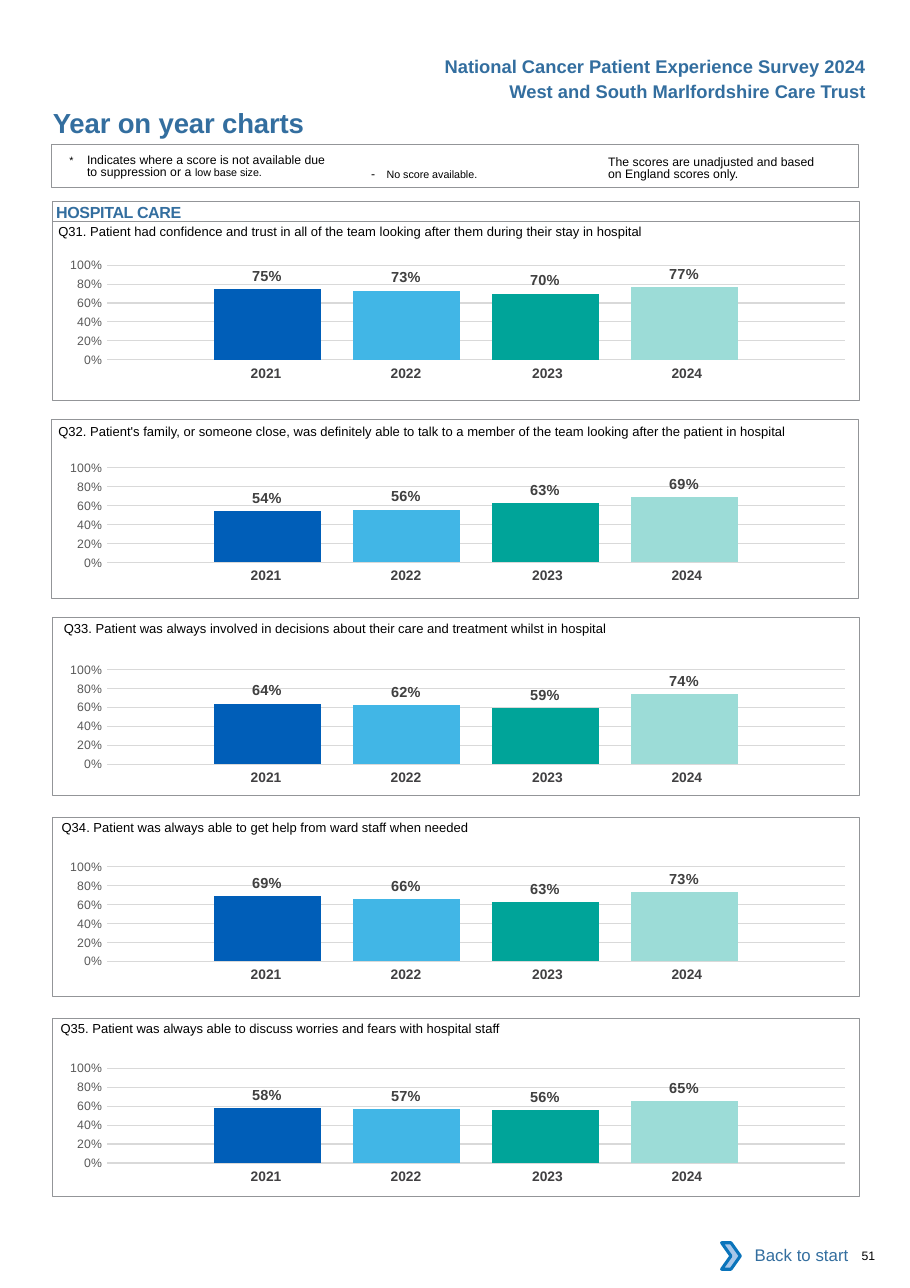
"""Build the year on year charts page for the hospital care questions."""
from lxml import etree
from pptx import Presentation
from pptx import util as u
from pptx.chart import data as chart_data
from pptx.dml import color as dml
from pptx.enum import chart as charts, shapes, text
from pptx.oxml import ns

colour = dml.RGBColor.from_string
BLUE, BLACK, FRAME = "336E9F", "000000", "939598"
YEARS = {"2021": "005EB8", "2022": "41B6E6", "2023": "00A499", "2024": "9CDCD7"}
RIGHT = text.PP_ALIGN.RIGHT


def set_format(target, **values):
    for name, value in values.items():
        if name == "color":
            target.color.rgb = colour(value)
        else:
            setattr(target, name, value)


def add_text(bounds, wording, size, color=BLACK, bold=False, inset=(0, 0, 0, 0),
             align=None, line=None, hanging=0, spacing=0):
    shape = slide.shapes.add_textbox(*map(u.Inches, bounds))
    left, top, right, bottom = map(u.Inches, inset)
    set_format(shape.text_frame, word_wrap=True, margin_left=left, margin_top=top,
               margin_right=right, margin_bottom=bottom)
    paragraph = shape.text_frame.paragraphs[0]
    set_format(paragraph, alignment=align, line_spacing=line)
    if hanging:
        properties = paragraph._p.get_or_add_pPr()
        properties.set("marL", str(u.Inches(hanging)))
        properties.set("indent", str(-u.Inches(hanging)))
    pieces = wording if isinstance(wording, list) else [(wording, size)]
    for words, points in pieces:
        run = paragraph.add_run()
        run.text = words
        set_format(run.font, name="Arial", size=u.Pt(points), bold=bold, color=color)
        if spacing:
            run._r.get_or_add_rPr().set("spc", str(spacing))


presentation = Presentation()
set_format(presentation, slide_width=u.Inches(8.26), slide_height=u.Inches(11.69))
slide = presentation.slides.add_slide(presentation.slide_layouts[6])

for top, heading in ((0.45, "National Cancer Patient Experience Survey 2024"),
                     (0.68, "West and South Marlfordshire Care Trust")):
    add_text((3.76, top, 4.2, 0.3), heading, 12, BLUE, True, (0.1, 0.05, 0.1, 0.05), RIGHT)
add_text((0.48, 0.96, 4.5, 0.3), "Year on year charts", 18, BLUE, True, spacing=-10)

add_text((0.63, 1.37, 2.38, 0.27),
         [("*\t", 7), ("Indicates where a score is not available due to suppression or a ", 8),
          ("low base size.", 7)],
         8, inset=(0, 0.03, 0, 0), line=u.Pt(8.1), hanging=0.16)
add_text((3.37, 1.51, 1.6, 0.17), [("-\t", 8), ("No score available.", 7)], 8, hanging=0.14)
add_text((5.52, 1.39, 1.95, 0.27), "The scores are unadjusted and based on England scores only.",
         8, inset=(0, 0.03, 0, 0), line=u.Pt(8.1))
add_text((0.51, 1.84, 7.2, 0.17), "HOSPITAL CARE", 10.5, BLUE, True, spacing=-20)

questions = [
    ("Q31. Patient had confidence and trust in all of the team looking after them during their "
     "stay in hospital", (0.53, 1.94), (0.48, 2.01), 2.22, (0.75, 0.73, 0.7, 0.77)),
    ("Q32. Patient's family, or someone close, was definitely able to talk to a member of the "
     "team looking after the patient in hospital", (0.53, 3.75), (0.47, 3.81), 4.06,
     (0.54, 0.56, 0.63, 0.69)),
    ("Q33. Patient was always involved in decisions about their care and treatment whilst in "
     "hospital", (0.58, 5.54), (0.48, 5.6), 5.89, (0.64, 0.62, 0.59, 0.74)),
    ("Q34. Patient was always able to get help from ward staff when needed",
     (0.56, 7.35), (0.48, 7.42), 7.68, (0.69, 0.66, 0.63, 0.73)),
    ("Q35. Patient was always able to discuss worries and fears with hospital staff",
     (0.55, 9.17), (0.48, 9.24), 9.51, (0.58, 0.57, 0.56, 0.65)),
]
frames = [(0.47, 1.31, 7.32, 0.39, 0.75), (0.48, 1.83, 7.32, 0.18, 0.5)]

for question, question_corner, frame_corner, chart_top, scores in questions:
    add_text((*question_corner, 7.2, 0.24), question, 8.5, inset=(0, 0.09, 0, 0))
    frames.append((*frame_corner, 7.32, 1.62, 0.5))

    values = chart_data.CategoryChartData(number_format="0%")
    values.categories = ["1"]
    for year, score in zip(YEARS, scores):
        values.add_series(year, [score])
    chart = slide.shapes.add_chart(
        charts.XL_CHART_TYPE.COLUMN_CLUSTERED,
        *map(u.Inches, (0.39, chart_top, 7.32, 1.29)), values).chart
    set_format(chart, has_legend=False, has_title=False)
    set_format(chart.font, name="Calibri", size=u.Pt(10), color=BLACK)
    chart.category_axis.visible = False
    axis = chart.value_axis
    set_format(axis, minimum_scale=0, maximum_scale=1, major_unit=0.2,
               major_tick_mark=charts.XL_TICK_MARK.NONE)
    set_format(axis.tick_labels, number_format="0%", number_format_is_linked=False)
    set_format(axis.tick_labels.font, name="Arial", size=u.Pt(8), color="595959")
    axis.format.line.fill.background()
    set_format(axis.major_gridlines.format.line, color="D9D9D9", width=u.Pt(0.75))

    plot = chart.plots[0]
    set_format(plot, gap_width=200, overlap=-30, vary_by_categories=False)
    for series, fill in zip(plot.series, YEARS.values()):
        series.format.fill.solid()
        series.format.fill.fore_color.rgb = colour(fill)
        labels = series.data_labels
        set_format(labels, show_value=True, number_format="0%", number_format_is_linked=False,
                   position=charts.XL_LABEL_POSITION.OUTSIDE_END)
        set_format(labels.font, name="Arial", size=u.Pt(9.5), bold=True, color="404040")

    plot_area = chart._chartSpace.chart.plotArea
    for old_layout in plot_area.findall(ns.qn("c:layout")):
        plot_area.remove(old_layout)
    layout = etree.Element(ns.qn("c:layout"))
    plot_area.insert(0, layout)
    manual = etree.SubElement(layout, ns.qn("c:manualLayout"))
    for tag, value in (("layoutTarget", "inner"), ("xMode", "edge"), ("yMode", "edge"),
                       ("x", "0.079"), ("y", "0.145"), ("w", "0.915"), ("h", "0.666")):
        etree.SubElement(manual, ns.qn(f"c:{tag}")).set("val", value)

    table = slide.shapes.add_table(
        1, 4, *map(u.Inches, (1.73, chart_top + 1.05, 5.15, 0.27))).table
    set_format(table, first_row=False, horz_banding=False)
    table._tbl.tblPr.find(ns.qn("a:tableStyleId")).text = "{2D5ABB26-0587-4C30-8999-92F81FD0307C}"
    for index, (year, width, margin) in enumerate(
            zip(YEARS, (1.27, 1.27, 1.34, 1.27), (0, 0, 0.04, 0.12))):
        table.columns[index].width = u.Inches(width)
        cell = table.cell(0, index)
        cell.fill.background()
        set_format(cell, text=year, margin_left=u.Inches(0.1), margin_right=u.Inches(margin))
        paragraph = cell.text_frame.paragraphs[0]
        paragraph.alignment = text.PP_ALIGN.CENTER
        set_format(paragraph.runs[0].font, name="Arial", size=u.Pt(9), bold=True, color="414042")

for *bounds, weight in frames:
    frame = slide.shapes.add_shape(shapes.MSO_SHAPE.RECTANGLE, *map(u.Inches, bounds))
    frame.shadow.inherit = False
    frame.fill.background()
    set_format(frame.line, color=FRAME, width=u.Pt(weight))

add_text((6.62, 11.25, 1.18, 0.3), "Back to start", 11, BLUE,
         inset=(0.1, 0.05, 0.1, 0.05), align=RIGHT)
chevron = slide.shapes.add_shape(
    shapes.MSO_SHAPE.CHEVRON, *map(u.Inches, (6.55, 11.28, 0.17, 0.24)))
chevron.shadow.inherit = False
chevron.fill.solid()
chevron.fill.fore_color.rgb = colour("A8C7E9")
set_format(chevron.line, color="0A74BB", width=u.Pt(2))
add_text((7.82, 11.33, 0.41, 0.13), "51", 8)

presentation.save("out.pptx")
